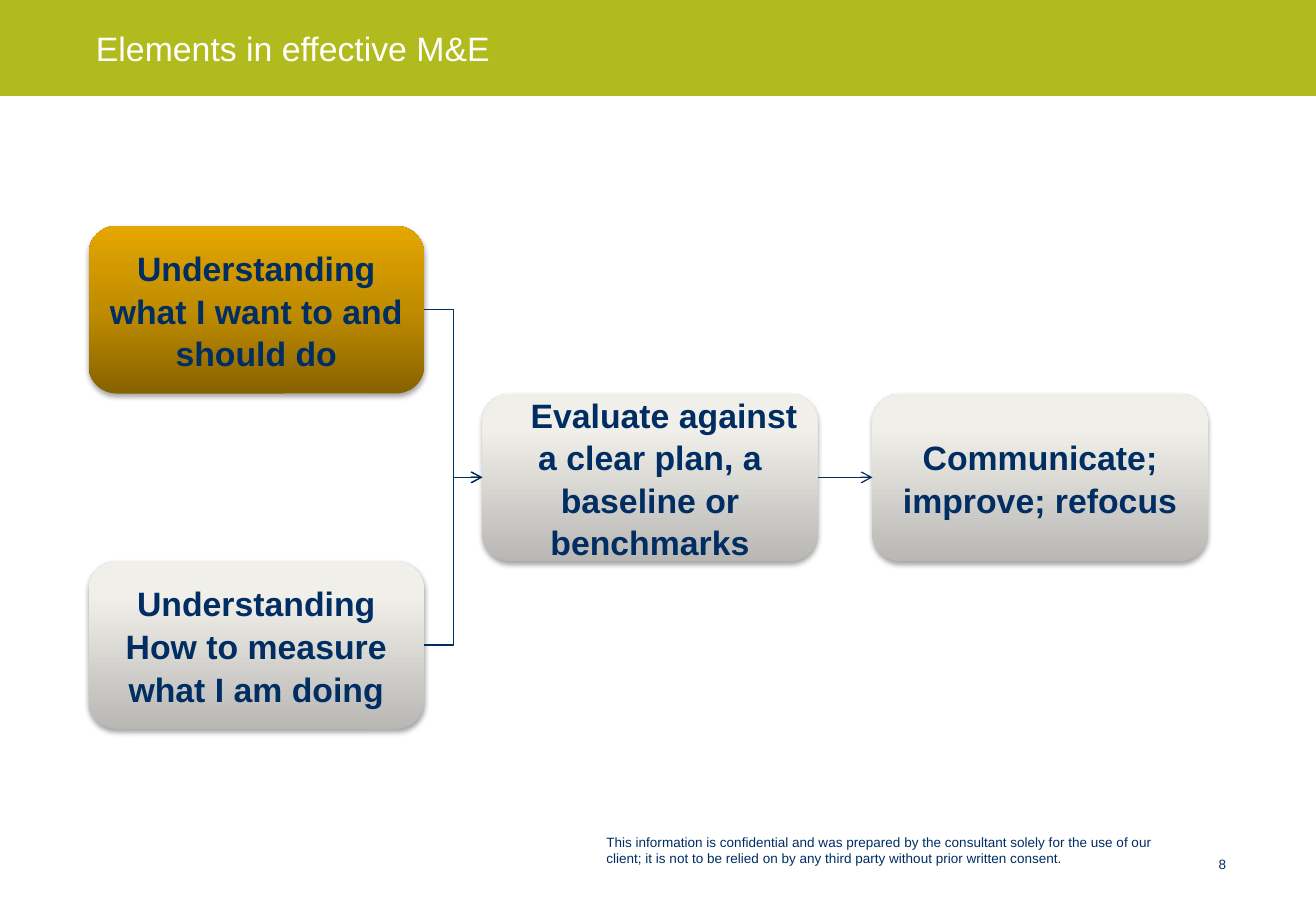
from lxml import etree
from pptx import Presentation
from pptx.dml.color import RGBColor
from pptx.enum.shapes import MSO_CONNECTOR, MSO_SHAPE
from pptx.enum.text import MSO_ANCHOR, PP_ALIGN
from pptx.oxml import parse_xml
from pptx.oxml.ns import nsdecls, qn
from pptx.util import Inches, Pt
from copy import deepcopy

RECT, ROUNDED = MSO_SHAPE.RECTANGLE, MSO_SHAPE.ROUNDED_RECTANGLE
ELBOW = MSO_CONNECTOR.ELBOW
MIDDLE, BOTTOM = MSO_ANCHOR.MIDDLE, MSO_ANCHOR.BOTTOM
LEFT, CENTER, RIGHT = PP_ALIGN.LEFT, PP_ALIGN.CENTER, PP_ALIGN.RIGHT
LEFT_SIDE, RIGHT_SIDE = 1, 3

# Content
TITLE = "Elements in effective M&E"
DISCLAIMER = ("This information is confidential and was prepared by the consultant solely "
              "for the use of our client; it is not to be relied on by any third party "
              "without prior written consent.")
PAGE_NUMBER = "8"
NAVY, WHITE, GREEN = "002D62", "FFFFFF", "B2BB1E"
GOLD = [(0, "876200"), (0.5, "C08C00"), (1, "E4A600")]
GREY = [(0, "B9B8B4"), (0.8, "F0EFEA"), (1, "F1F0EB")]
# name: text, column, row, gradient, first-line indent
STEPS = {
    "aims": ("Understanding what I want to and should do", 0, 0, GOLD, 0),
    "measures": ("Understanding How to measure what I am doing", 0, 2, GREY, 0),
    "evaluate": ("Evaluate against a clear plan, a baseline or benchmarks", 1, 1, GREY, 0.23),
    "communicate": ("Communicate; improve; refocus", 2, 1, GREY, 0),
}
ARROWS = [("aims", "evaluate"), ("measures", "evaluate"), ("evaluate", "communicate")]

# Layout
PAGE_WIDTH, PAGE_HEIGHT, BAND_HEIGHT = 10.83, 7.5, 0.79
COLUMNS = [0.73, 3.97, 7.18]
FIRST_ROW, STEP_WIDTH, STEP_HEIGHT = 1.86, 2.76, 1.38


def color(value):
    return RGBColor.from_string(value)


def write(shape, text, size, ink, align, anchor, insets, bold=False):
    frame = shape.text_frame
    frame.word_wrap = True
    frame.vertical_anchor = anchor
    (frame.margin_left, frame.margin_top,
     frame.margin_right, frame.margin_bottom) = map(Inches, insets)
    para = frame.paragraphs[0]
    para.alignment = align
    span = para.add_run()
    span.text = text
    span.font.name, span.font.size, span.font.bold = "Arial", Pt(size), bold
    span.font.color.rgb = color(ink)
    return para


def add_text(bounds, *style):
    box = page.shapes.add_textbox(*map(Inches, bounds))
    write(box, *style)


def paint_gradient(shape, stops):
    shape.fill.gradient()
    shape.fill.gradient_angle = 90
    stop_list = shape._element.spPr.find(qn("a:gradFill")).find(qn("a:gsLst"))
    while len(stop_list) < len(stops):
        stop_list.append(deepcopy(stop_list[0]))
    for stop, (position, value) in zip(shape.fill.gradient_stops, stops):
        stop.position = position
        stop.color.rgb = color(value)


def add_step(text, column, row, stops, indent):
    bounds = (COLUMNS[column], FIRST_ROW + row * STEP_HEIGHT, STEP_WIDTH, STEP_HEIGHT)
    step = page.shapes.add_shape(ROUNDED, *map(Inches, bounds))
    paint_gradient(step, stops)
    step.line.fill.background()
    step.shadow.inherit = False
    step._element.spPr.find(qn("a:effectLst")).append(parse_xml(
        f'<a:outerShdw {nsdecls("a")} blurRad="{Pt(3.1)}" dist="{Pt(1.8)}" dir="5400000" '
        'rotWithShape="0"><a:srgbClr val="000000"><a:alpha val="35000"/></a:srgbClr>'
        '</a:outerShdw>'))
    para = write(step, text, 20, NAVY, CENTER, MIDDLE, (0.1, 0.05, 0.1, 0.05), True)
    para.line_spacing = 1.05
    if indent:
        para._p.get_or_add_pPr().set("indent", str(Inches(indent)))
    return step


def add_arrow(start, end):
    arrow = page.shapes.add_connector(ELBOW, 0, 0, 0, 0)
    arrow.begin_connect(start, RIGHT_SIDE)
    arrow.end_connect(end, LEFT_SIDE)
    arrow.line.color.rgb = color(NAVY)
    arrow.line.width = Pt(0.75)
    etree.SubElement(arrow.line._get_or_add_ln(), qn("a:tailEnd"), type="arrow")
    etree.SubElement(arrow._element.spPr, qn("a:effectLst"))


deck = Presentation()
deck.slide_width, deck.slide_height = Inches(PAGE_WIDTH), Inches(PAGE_HEIGHT)
page = deck.slides.add_slide(deck.slide_layouts[6])

# Title band, disclaimer and page number
band_bounds = (0, 0, PAGE_WIDTH, BAND_HEIGHT)
band = page.shapes.add_shape(RECT, *map(Inches, band_bounds))
band.shadow.inherit = False
band.fill.solid()
band.fill.fore_color.rgb = color(GREEN)
band.line.fill.background()
add_text((4.99, 6.86, 4.69, 0.27), DISCLAIMER, 8, NAVY, LEFT, BOTTOM, (0, 0, 0, 0))
add_text(band_bounds, TITLE, 20, WHITE, LEFT, MIDDLE, (0.79, 0, 0, 0))
add_text((9.75, 6.66, 0.44, 0.52), PAGE_NUMBER, 8, NAVY, RIGHT, BOTTOM, (0, 0.05, 0.1, 0))

# Process steps and arrows
steps = {name: add_step(*step) for name, step in STEPS.items()}
for start, end in ARROWS:
    add_arrow(steps[start], steps[end])

deck.save("out.pptx")
